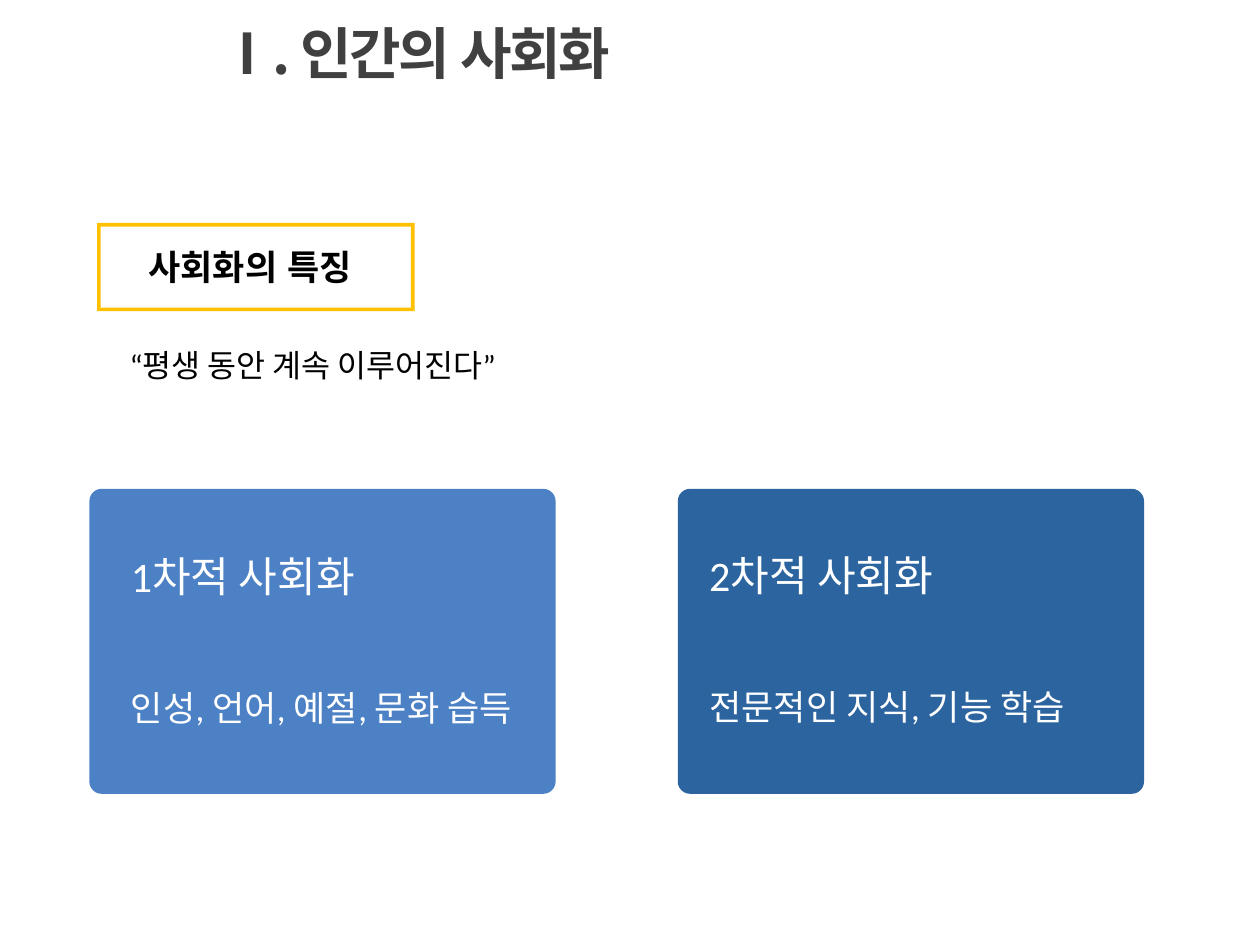
"""Build a slide on the features of human socialization."""
from lxml.etree import SubElement
from pptx import Presentation
from pptx.dml.color import RGBColor as Color
from pptx.enum.shapes import MSO_SHAPE as Shape
from pptx.enum.text import MSO_ANCHOR as Anchor, PP_ALIGN as Align
from pptx.oxml.ns import qn
from pptx.util import Pt

PX = 9144
KOREAN = "Noto Sans CJK KR"
COLORS = {
    "title": "404040",
    "ink": "000000",
    "white": "FFFFFF",
    "frame": "FFC000",
    "primary": "4C81C5",
    "secondary": "2C649F",
}


def add_text(page, place, lines, font="Calibri", color="ink", bold=False,
             align=Align.LEFT, anchor=Anchor.TOP, gap=0, spacing=0):
    box = page.shapes.add_textbox(*[n * PX for n in place])
    frame = box.text_frame
    frame.word_wrap = True
    frame.vertical_anchor = anchor
    for index, (text, size) in enumerate(lines):
        para = frame.add_paragraph() if index else frame.paragraphs[0]
        para.alignment = align
        if index:
            para.space_before = Pt(gap)
        span = para.add_run()
        span.text = text
        span.font.size = Pt(size)
        span.font.bold = bold
        span.font.name = font
        span.font.color.rgb = Color.from_string(COLORS[color])
        props = span.font._element
        SubElement(props, qn("a:ea")).set("typeface", font)
        props.set("lang", "ko-KR")
        if spacing:
            props.set("spc", str(spacing))


def add_block(page, kind, place, color, adjustment):
    block = page.shapes.add_shape(kind, *[n * PX for n in place])
    block.adjustments[0] = adjustment
    block.shadow.inherit = False
    block.fill.solid()
    block.fill.fore_color.rgb = Color.from_string(COLORS[color])
    block.line.fill.background()


deck = Presentation()
deck.slide_width = 1000 * PX
deck.slide_height = 750 * PX
page = deck.slides.add_slide(deck.slide_layouts[6])

add_text(page, (164, -1, 802, 85), [("Ⅰ. 인간의 사회화", 32)], font=KOREAN,
         color="title", bold=True, anchor=Anchor.MIDDLE, spacing=-150)
add_text(page, (77, 190, 243, 44), [("사회화의 특징", 20)], font=KOREAN,
         bold=True, align=Align.CENTER)
add_block(page, Shape.FRAME, (77, 177, 252, 70), "frame", 0.04)
add_text(page, (93, 270, 387, 71), [("“평생 동안 계속 이루어진다”", 18)])

stages = [
    (71, "primary", (94, 432, 349, 151), "1차적 사회화", "인성, 언어, 예절, 문화 습득"),
    (538, "secondary", (553, 431, 356, 182), "2차적 사회화", "전문적인 지식, 기능 학습"),
]
for left, color, place, heading, detail in stages:
    add_block(page, Shape.ROUNDED_RECTANGLE, (left, 388, 370, 242), color, 0.04)
    add_text(page, place, [(heading, 24), (detail, 20)], color="white", gap=49)

deck.save("out.pptx")
